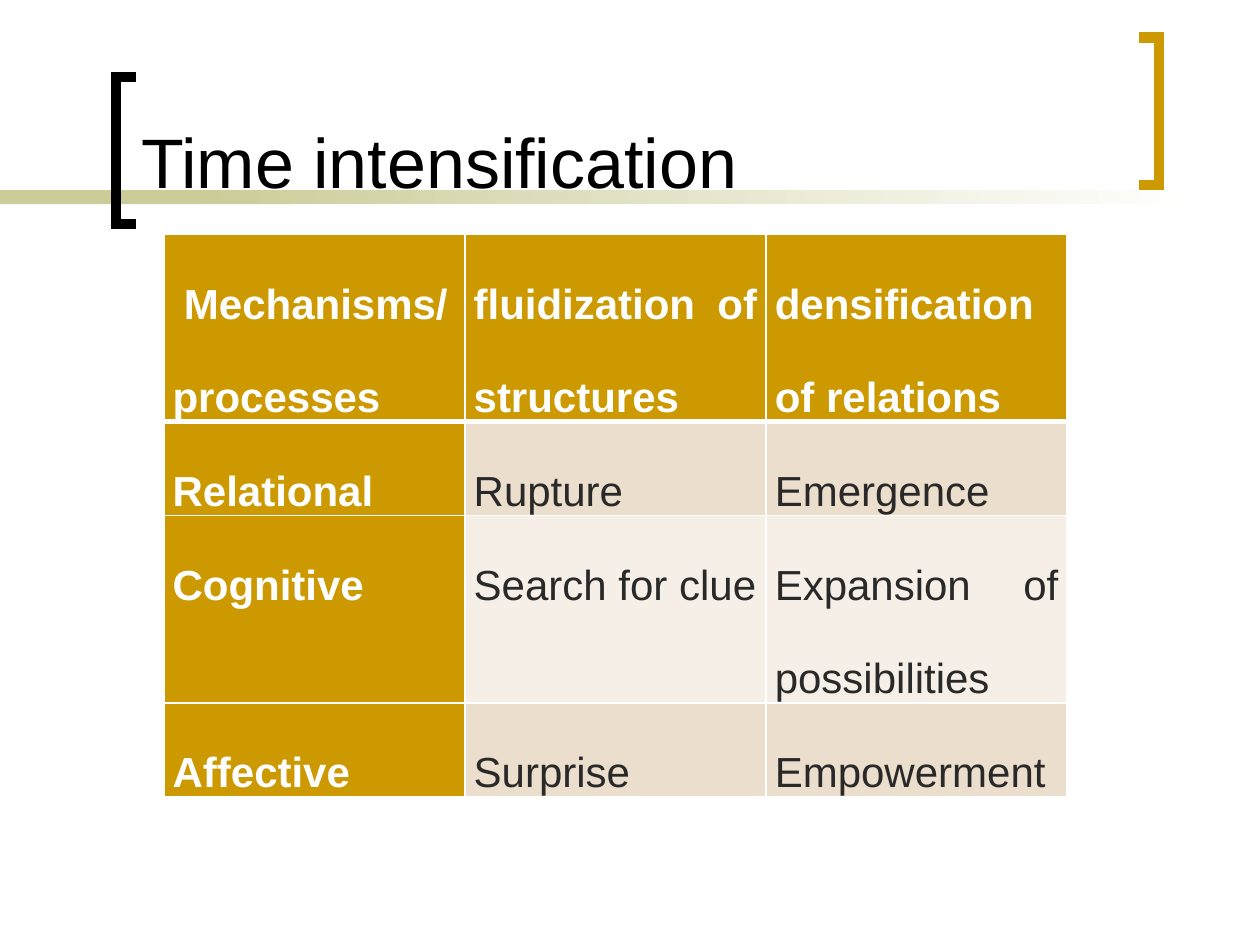
from typing import NamedTuple

from lxml import etree
from pptx import Presentation, util as u
from pptx.dml.color import RGBColor
from pptx.enum import shapes, text
from pptx.oxml import ns

BLACK = RGBColor(0x00, 0x00, 0x00)
WHITE = RGBColor(0xFF, 0xFF, 0xFF)
GOLD = RGBColor(0xCC, 0x99, 0x00)
SAGE = RGBColor(0xCC, 0xCC, 0x99)
CHARCOAL = RGBColor(0x29, 0x29, 0x29)
SAND = RGBColor(0xEC, 0xDE, 0xCC)
CREAM = RGBColor(0xF6, 0xEF, 0xE7)
FONT = "Arial"

ROWS = [
    ["Mechanisms/processes", "fluidization of structures", "densification of relations"],
    ["Relational", "Rupture", "Emergence"],
    ["Cognitive", "Search for clue", "Expansion of possibilities"],
    ["Affective", "Surprise", "Empowerment"],
]
ROW_HEIGHTS = [1.48, 0.74, 1.48, 0.74]
COLUMN_WIDTH = 2.39


class Bracket(NamedTuple):
    spine_x: float
    tip_x: float
    top: float
    color: RGBColor
    height: float = 1.17


BRACKETS = [Bracket(0.92, 1.08, 0.61, BLACK), Bracket(9.2, 9.04, 0.3, GOLD)]


def add_band(slide, left: float, width: float):
    band = slide.shapes.add_shape(
        shapes.MSO_SHAPE.RECTANGLE,
        u.Inches(left), u.Inches(1.51), u.Inches(width), u.Inches(0.11))
    band.shadow.inherit = False
    band.line.fill.background()
    return band


def add_bands(slide) -> None:
    solid = add_band(slide, 0, 2.33)
    solid.fill.solid()
    solid.fill.fore_color.rgb = SAGE
    fading = add_band(slide, 1.58, 7.92)
    fading.fill.gradient()
    fading.fill.gradient_angle = 0
    for stop, color in zip(fading.fill.gradient_stops, (SAGE, WHITE)):
        stop.color.rgb = color


def add_bracket(slide, bracket: Bracket) -> None:
    bottom = bracket.top + bracket.height
    points = [(bracket.spine_x, bracket.top), (bracket.spine_x, bottom),
              (bracket.tip_x, bottom)]
    builder = slide.shapes.build_freeform(
        u.Inches(bracket.tip_x), u.Inches(bracket.top))
    builder.add_line_segments(
        [(u.Inches(x), u.Inches(y)) for x, y in points], close=False)
    outline = builder.convert_to_shape()
    outline.shadow.inherit = False
    outline.fill.background()
    outline.line.color.rgb = bracket.color
    outline.line.width = u.Pt(6)
    etree.SubElement(outline.line._get_or_add_ln(), ns.qn("a:miter"), lim="800000")


def set_title(slide, wording: str) -> None:
    title = slide.shapes.title
    title.left, title.top = u.Inches(1.02), u.Inches(0.11)
    title.width, title.height = u.Inches(7.83), u.Inches(1.55)
    frame = title.text_frame
    frame.text = wording
    frame.auto_size = text.MSO_AUTO_SIZE.NONE
    frame.vertical_anchor = text.MSO_ANCHOR.BOTTOM
    para = frame.paragraphs[0]
    para.alignment = text.PP_ALIGN.LEFT
    para.font.name, para.font.size = FONT, u.Pt(40)
    para.font.color.rgb = BLACK


def set_borders(cell, row: int) -> None:
    """White rules, with a heavy one between the header and the body."""
    properties = cell._tc.get_or_add_tcPr()
    for side in "LRTB":
        heavy = (row, side) in ((0, "B"), (1, "T"))
        rule = etree.SubElement(properties, ns.qn(f"a:ln{side}"),
                                w=str(u.Pt(3 if heavy else 1)))
        fill = etree.SubElement(rule, ns.qn("a:solidFill"))
        etree.SubElement(fill, ns.qn("a:srgbClr"), val=str(WHITE))


def fill_cell(cell, wording: str, row: int, column: int) -> None:
    heading = row == 0 or column == 0
    set_borders(cell, row)
    cell.fill.solid()
    cell.fill.fore_color.rgb = GOLD if heading else SAND if row % 2 else CREAM
    cell.margin_left = cell.margin_right = u.Inches(0.07)
    cell.margin_top = cell.margin_bottom = 0
    cell.text = wording
    para = cell.text_frame.paragraphs[0]
    para.alignment = text.PP_ALIGN.JUSTIFY
    para.line_spacing = 2.0
    para.font.name, para.font.size = FONT, u.Pt(24)
    para.font.bold = heading
    para.font.color.rgb = WHITE if heading else CHARCOAL


def add_process_table(slide) -> None:
    columns = len(ROWS[0])
    table = slide.shapes.add_table(
        len(ROWS), columns, u.Inches(1.3), u.Inches(1.86),
        u.Inches(columns * COLUMN_WIDTH), u.Inches(sum(ROW_HEIGHTS))).table
    for column in table.columns:
        column.width = u.Inches(COLUMN_WIDTH)
    for r, (wordings, height) in enumerate(zip(ROWS, ROW_HEIGHTS)):
        table.rows[r].height = u.Inches(height)
        for c, wording in enumerate(wordings):
            fill_cell(table.cell(r, c), wording, r, c)
    corner = table.cell(0, 0).text_frame.paragraphs[0]
    corner._p.get_or_add_pPr().set("indent", str(u.Inches(0.09)))


def main() -> None:
    deck = Presentation()
    deck.slide_width, deck.slide_height = u.Inches(10), u.Inches(7.5)
    slide = deck.slides.add_slide(deck.slide_layouts.get_by_name("Title Only"))
    add_bands(slide)
    for bracket in BRACKETS:
        add_bracket(slide, bracket)
    set_title(slide, "Time intensification")
    add_process_table(slide)
    deck.save("out.pptx")


if __name__ == "__main__":
    main()
